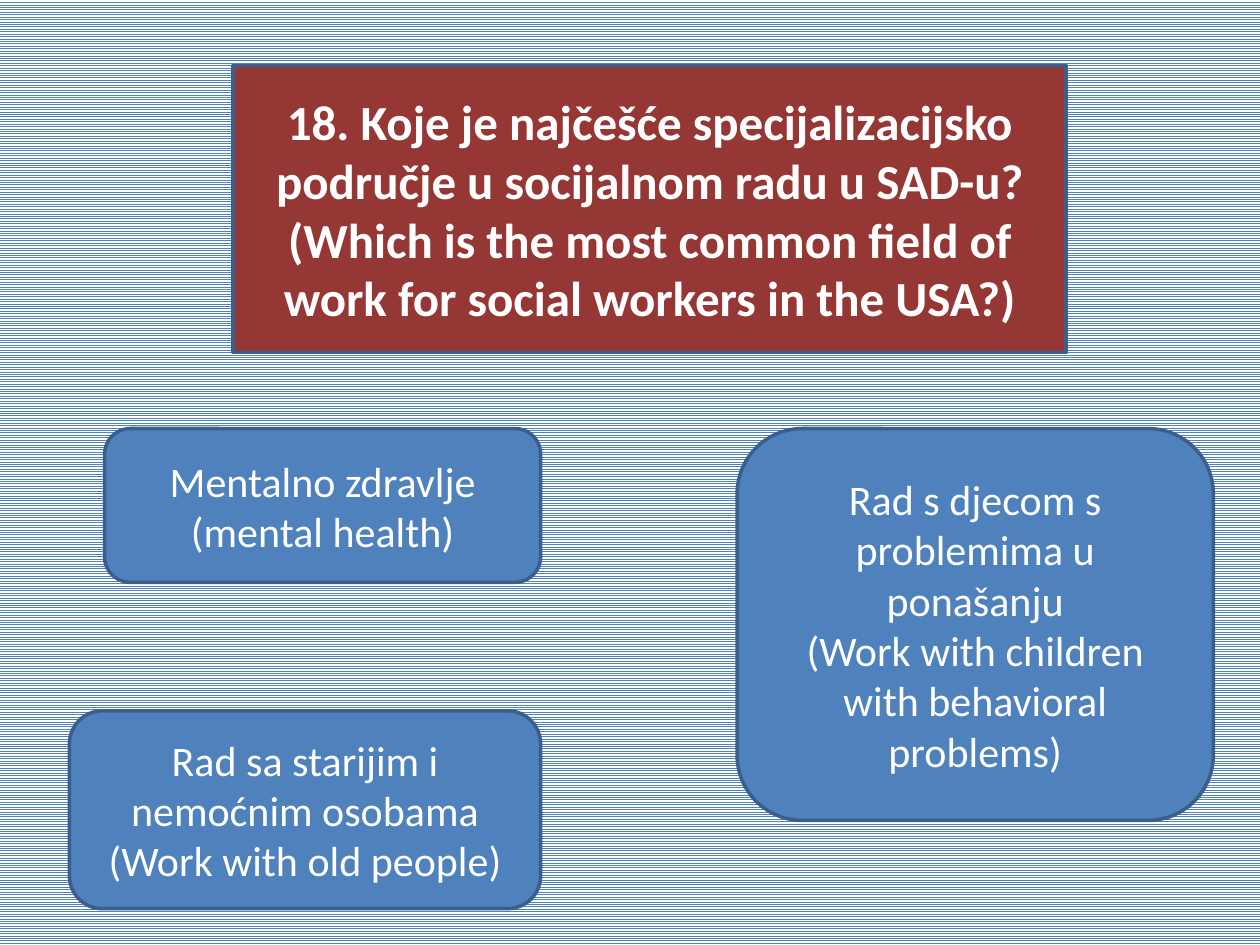
from pptx import Presentation
from pptx.dml.color import RGBColor
from pptx.enum.dml import MSO_PATTERN
from pptx.enum.shapes import MSO_SHAPE
from pptx.enum.text import MSO_ANCHOR, MSO_AUTO_SIZE, PP_ALIGN
from pptx.util import Cm, Pt

WHITE = RGBColor(0xFF, 0xFF, 0xFF)
BLUE = RGBColor(0x4F, 0x81, 0xBD)
DARK_BLUE = RGBColor(0x3A, 0x5F, 0x8C)
RED = RGBColor(0x95, 0x37, 0x35)

QUESTION = [
    "18. Koje je najčešće specijalizacijsko područje u socijalnom radu u SAD-u?",
    "(Which is the most common field of work for social workers in the USA?)",
]
ANSWERS = [
    ((2.11, 8.64, 8.79, 3.1), ["Mentalno zdravlje", "(mental health)"]),
    ((1.4, 14.33, 9.5, 3.99),
     ["Rad sa starijim i nemoćnim osobama", "(Work with old people)"]),
    ((14.86, 8.64, 9.6, 7.9),
     ["Rad s djecom s problemima u ponašanju",
      "(Work with children with behavioral problems)"]),
]


def write_text(frame, lines, size=24, bold=False, color=WHITE, font="Calibri"):
    frame.word_wrap = True
    frame.auto_size = MSO_AUTO_SIZE.NONE
    frame.vertical_anchor = MSO_ANCHOR.MIDDLE
    for index, line in enumerate(lines):
        para = frame.add_paragraph() if index else frame.paragraphs[0]
        para.alignment = PP_ALIGN.CENTER
        span = para.add_run()
        span.text = line
        span.font.name = font
        span.font.size = Pt(size)
        span.font.bold = bold
        span.font.color.rgb = color


class QuizPage:
    def __init__(self, page, outline=DARK_BLUE, outline_width=2):
        self.page = page
        self.outline = outline
        self.outline_width = outline_width

    def background(self, stripe, ground):
        fill = self.page.background.fill
        fill.patterned()
        fill.pattern = MSO_PATTERN.NARROW_HORIZONTAL
        fill.fore_color.rgb = stripe
        fill.back_color.rgb = ground

    def paint(self, box, color):
        box.fill.solid()
        box.fill.fore_color.rgb = color
        box.line.color.rgb = self.outline
        box.line.width = Pt(self.outline_width)

    def question(self, place, lines):
        box = self.page.shapes.title
        box.left, box.top, box.width, box.height = map(Cm, place)
        self.paint(box, RED)
        write_text(box.text_frame, lines, size=28, bold=True)

    def answer(self, place, lines):
        box = self.page.shapes.add_shape(
            MSO_SHAPE.ROUNDED_RECTANGLE, *map(Cm, place))
        box.shadow.inherit = False
        self.paint(box, BLUE)
        write_text(box.text_frame, lines)


def main():
    deck = Presentation()
    deck.slide_width, deck.slide_height = Cm(25.4), Cm(19.05)
    title_only = deck.slide_layouts[5]
    quiz = QuizPage(deck.slides.add_slide(title_only))
    quiz.background(BLUE, WHITE)
    quiz.question((4.7, 1.32, 16.79, 5.79), QUESTION)
    for place, lines in ANSWERS:
        quiz.answer(place, lines)
    deck.save("out.pptx")


if __name__ == "__main__":
    main()
